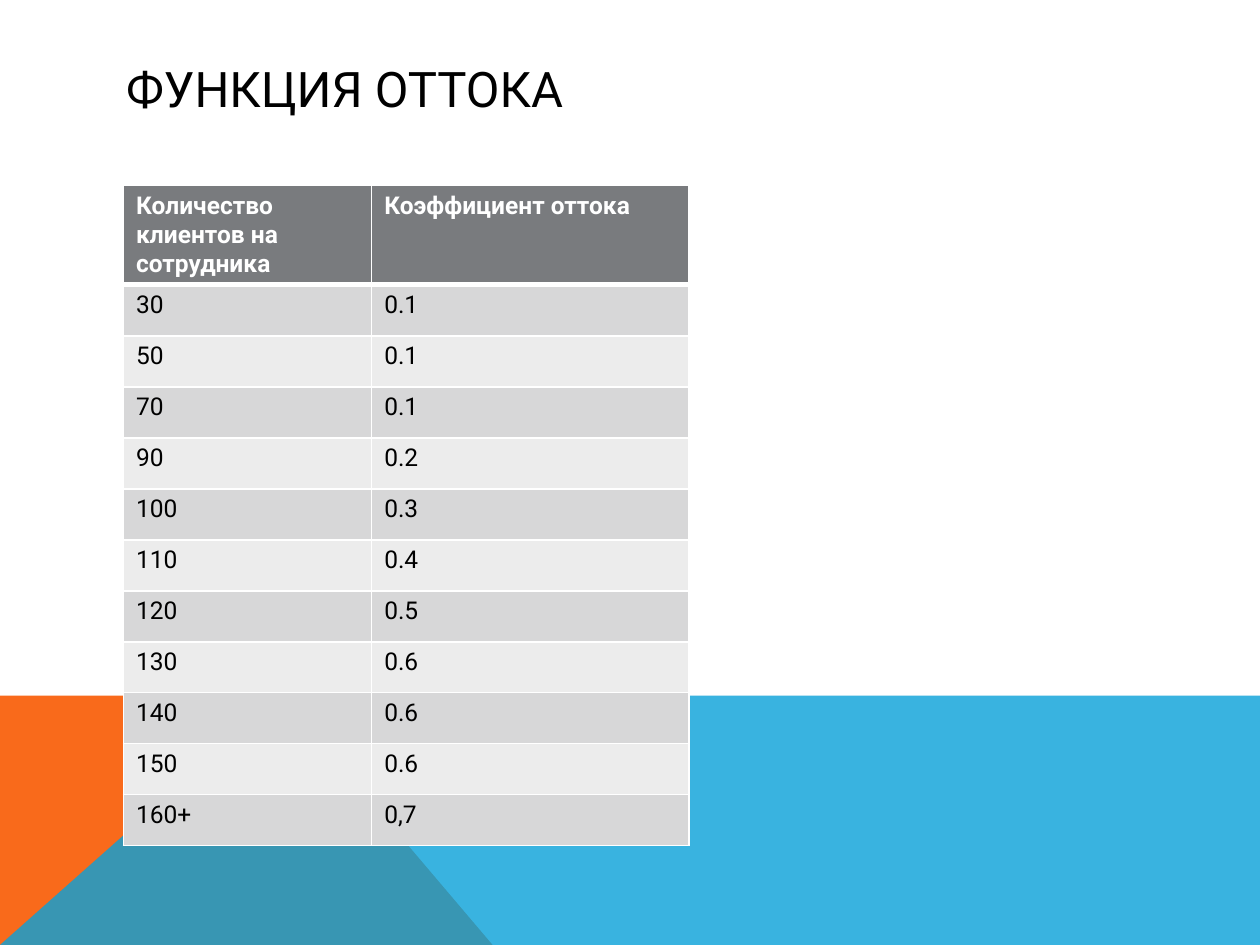
"""Builds the churn function slide: title, lookup table and a two-tone footer."""
from dataclasses import dataclass

from lxml import etree
from pptx import Presentation
from pptx.dml.color import RGBColor
from pptx.enum.text import MSO_ANCHOR, MSO_AUTO_SIZE, PP_ALIGN
from pptx.oxml.ns import qn
from pptx.util import Inches, Pt

LEFT, MIDDLE, NO_FIT = PP_ALIGN.LEFT, MSO_ANCHOR.MIDDLE, MSO_AUTO_SIZE.NONE
WIDTH, HEIGHT = Inches(10), Inches(7.5)
FONT = "Roboto"
FOOTER_TOP, PEAK = 0.736, 0.223
HEADER_HEIGHT, ROW_HEIGHT = Inches(0.79), Inches(0.405)
COLUMN_WIDTHS = (Inches(1.97), Inches(2.52))
HEADER = ("Количество клиентов на сотрудника", "Коэффициент оттока")
CHURN = (
    ("30", "0.1"), ("50", "0.1"), ("70", "0.1"), ("90", "0.2"),
    ("100", "0.3"), ("110", "0.4"), ("120", "0.5"), ("130", "0.6"),
    ("140", "0.6"), ("150", "0.6"), ("160+", "0,7"),
)


@dataclass(frozen=True)
class Panel:
    """A footer polygon, with points as shares of the slide's size."""
    points: tuple[tuple[float, float], ...]
    color: str
    opacity: int = 100


@dataclass(frozen=True)
class RowStyle:
    """The look of one table row."""
    fill: str
    text: str
    bold: bool = False
    bottom_border: float = 1


PANELS = (
    Panel(((0, 1), (0, FOOTER_TOP), (PEAK, FOOTER_TOP), (0.391, 1)), "F96A1B"),
    Panel(((0, 1), (PEAK, FOOTER_TOP), (1, FOOTER_TOP), (1, 1)), "08A1D9", 80),
)
HEADER_STYLE = RowStyle("797B7E", "FFFFFF", True, 3)
BAND_STYLES = (RowStyle("D7D7D8", "000000"), RowStyle("ECECEC", "000000"))


def rgb(color: str) -> RGBColor:
    """Return the colour for a hex string."""
    return RGBColor.from_string(color)


def format_font(p, size: float, color: str, bold: bool = False) -> None:
    """Set the font of a whole paragraph."""
    p.font.name, p.font.size, p.font.bold = FONT, Pt(size), bold
    p.font.color.rgb = rgb(color)


def draw_panel(s, panel: Panel) -> None:
    """Draw one footer polygon."""
    points = [(round(x * WIDTH), round(y * HEIGHT)) for x, y in panel.points]
    builder = s.shapes.build_freeform(*points[0])
    builder.add_line_segments(points[1:], close=True)
    sp = builder.convert_to_shape()
    sp.shadow.inherit = False
    sp.line.fill.background()
    sp.fill.solid()
    sp.fill.fore_color.rgb = rgb(panel.color)
    if panel.opacity < 100:
        color = sp.fill._xPr.find(qn("a:solidFill"))[0]
        etree.SubElement(color, qn("a:alpha"), val=str(panel.opacity * 1000))


def draw_title(s, text: str) -> None:
    """Place and format the title placeholder."""
    sp = s.shapes.title
    sp.left, sp.top = Inches(0.9), Inches(0.4)
    sp.width, sp.height = Inches(8.22), Inches(0.6)
    tf = sp.text_frame
    tf.text = text
    tf.auto_size, tf.vertical_anchor = NO_FIT, MIDDLE
    p = tf.paragraphs[0]
    p.alignment = LEFT
    format_font(p, 28, "000000")


def add_borders(cell, bottom: float) -> None:
    """Give a cell white borders, the bottom one of its own width."""
    tc_pr = cell._tc.get_or_add_tcPr()
    for i, (side, width) in enumerate(zip("LRTB", (1, 1, 1, bottom))):
        ln = etree.Element(qn(f"a:ln{side}"), w=str(Pt(width)))
        fill = etree.SubElement(ln, qn("a:solidFill"))
        etree.SubElement(fill, qn("a:srgbClr"), val="FFFFFF")
        tc_pr.insert(i, ln)


def fill_row(table, index: int, values: tuple[str, ...], style: RowStyle,
             top_border: float) -> None:
    """Write and format one table row."""
    for cell, value in zip(table.rows[index].cells, values):
        cell.text = value
        format_font(cell.text_frame.paragraphs[0], 14, style.text, style.bold)
        cell.fill.solid()
        cell.fill.fore_color.rgb = rgb(style.fill)
        add_borders(cell, style.bottom_border)
        cell._tc.tcPr.find(qn("a:lnT")).set("w", str(Pt(top_border)))


def draw_table(s) -> None:
    """Draw the churn table with its header and banded rows."""
    rows = len(CHURN) + 1
    height = HEADER_HEIGHT + ROW_HEIGHT * len(CHURN)
    table = s.shapes.add_table(rows, len(HEADER), Inches(0.98), Inches(1.47),
                               sum(COLUMN_WIDTHS), height).table
    for column, width in zip(table.columns, COLUMN_WIDTHS):
        column.width = width
    for i, row in enumerate(table.rows):
        row.height = ROW_HEIGHT if i else HEADER_HEIGHT
    fill_row(table, 0, HEADER, HEADER_STYLE, 1)
    for i, values in enumerate(CHURN):
        top = 1 if i else HEADER_STYLE.bottom_border
        fill_row(table, i + 1, values, BAND_STYLES[i % 2], top)


def main() -> None:
    """Build and save the slide."""
    prs = Presentation()
    prs.slide_width, prs.slide_height = WIDTH, HEIGHT
    s = prs.slides.add_slide(prs.slide_layouts[5])
    for panel in PANELS:
        draw_panel(s, panel)
    draw_title(s, "ФУНКЦИЯ ОТТОКА")
    draw_table(s)
    prs.save("out.pptx")


if __name__ == "__main__":
    main()
